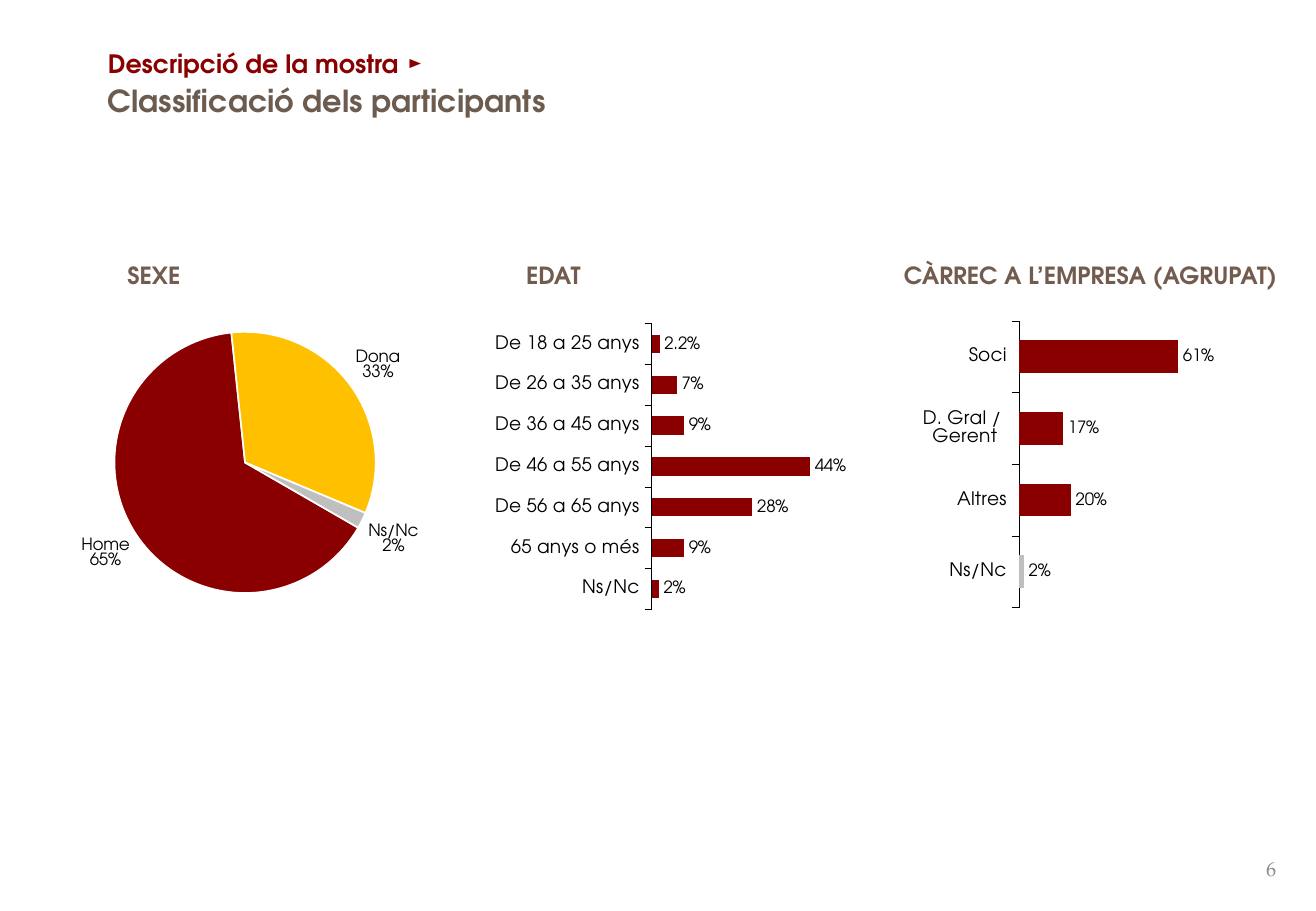
import pptx
import pptx.chart.data
import pptx.dml.color
import pptx.enum.chart
import pptx.enum.text
import pptx.oxml
import pptx.oxml.ns
import pptx.util

SANS = "TeX Gyre Adventor"
SERIF = "TeX Gyre Pagella"
RED, YELLOW, SILVER = "8A0000", "FFC000", "BFBFBF"
BROWN, TAUPE, GREY = "725C4F", "6B5C4F", "8C8C8C"
BLACK, WHITE = "000000", "FFFFFF"


def rgb(value):
    return pptx.dml.color.RGBColor.from_string(value)


def chart_xml(body):
    return pptx.oxml.parse_xml(body.replace(">", f" {pptx.oxml.ns.nsdecls('c')}>", 1))


class Deck:
    def __init__(self, width, height):
        self.prs = pptx.Presentation()
        self.prs.slide_width = pptx.util.Inches(width)
        self.prs.slide_height = pptx.util.Inches(height)
        self.s = self.prs.slides.add_slide(self.prs.slide_layouts[6])

    def box(self, left, top, width, height):
        column = self.prs.slide_width / 100
        row = self.prs.slide_height / 100
        return [round(v) for v in (left * column, top * row, width * column, height * row)]

    def style(self, font, size, color, bold=False, name=SANS):
        font.name = name
        font.size = pptx.util.Pt(size)
        font.bold = bold
        font.color.rgb = rgb(color)

    def text(self, area, words, size, color, bold=True, name=SANS, middle=False, right=False):
        tf = self.s.shapes.add_textbox(*self.box(*area)).text_frame
        tf.word_wrap = True
        anchor = pptx.enum.text.MSO_ANCHOR
        tf.vertical_anchor = anchor.MIDDLE if middle else anchor.TOP
        p = tf.paragraphs[0]
        align = pptx.enum.text.PP_ALIGN
        p.alignment = align.RIGHT if right else align.LEFT
        r = p.add_run()
        r.text = words
        self.style(r.font, size, color, bold, name)

    def chart(self, kind, area, values, plot_area):
        data = pptx.chart.data.CategoryChartData(number_format="0%")
        data.categories = list(values)
        data.add_series("Participants", list(values.values()))
        chart = self.s.shapes.add_chart(kind, *self.box(*area), data).chart
        chart.has_title = False
        chart.has_legend = False
        self.style(chart.font, 10, BLACK)
        plot = chart.plots[0]
        plot.vary_by_categories = False
        labels = plot.series[0].data_labels
        labels.show_value = True
        labels.number_format = "0%"
        labels.number_format_is_linked = False
        labels.position = pptx.enum.chart.XL_LABEL_POSITION.OUTSIDE_END
        self.style(labels.font, 10, BLACK)
        self.place_plot(chart, plot_area)
        return chart

    def place_plot(self, chart, plot_area):
        area = chart._chartSpace.xpath(".//c:plotArea")[0]
        for old in area.xpath("./c:layout"):
            area.remove(old)
        sizes = "".join(f'<c:{tag} val="{v}"/>' for tag, v in zip("xywh", plot_area))
        area.insert(0, chart_xml(
            '<c:layout><c:manualLayout><c:layoutTarget val="inner"/>'
            '<c:xMode val="edge"/><c:yMode val="edge"/>'
            f"{sizes}</c:manualLayout></c:layout>"))

    def fill(self, part, color):
        part.format.fill.solid()
        part.format.fill.fore_color.rgb = rgb(color)

    def pie(self, area, values, colors, start, plot_area):
        chart = self.chart(pptx.enum.chart.XL_CHART_TYPE.PIE, area, values, plot_area)
        series = chart.plots[0].series[0]
        series.data_labels.show_category_name = True
        bubble = chart._chartSpace.xpath(".//c:dLbls/c:showBubbleSize")[0]
        bubble.addnext(chart_xml("<c:separator>\n</c:separator>"))
        pie = chart._chartSpace.xpath(".//c:pieChart")[0]
        for old in pie.xpath("./c:firstSliceAng"):
            pie.remove(old)
        pie.append(chart_xml(f'<c:firstSliceAng val="{start}"></c:firstSliceAng>'))
        for i, color in enumerate(colors):
            point = series.points[i]
            self.fill(point, color)
            point.format.line.color.rgb = rgb(WHITE)
            point.format.line.width = pptx.util.Pt(1)

    def bars(self, area, values, plot_area):
        chart = self.chart(pptx.enum.chart.XL_CHART_TYPE.BAR_CLUSTERED, area, values, plot_area)
        chart.plots[0].gap_width = 120
        series = chart.plots[0].series[0]
        self.fill(series, RED)
        tick = pptx.enum.chart.XL_TICK_MARK
        axis = chart.category_axis
        axis.reverse_order = True
        axis.has_major_gridlines = False
        axis.major_tick_mark = tick.OUTSIDE
        axis.minor_tick_mark = tick.NONE
        axis.format.line.color.rgb = rgb(BLACK)
        axis.format.line.width = pptx.util.Pt(0.25)
        self.style(axis.tick_labels.font, 11, BLACK)
        scale = chart.value_axis
        scale.minimum_scale = 0
        scale.maximum_scale = 1
        scale.has_major_gridlines = False
        scale.visible = False
        return series

    def decimal_label(self, series, index):
        label = series.points[index].data_label
        self.style(label.font, 10, BLACK)
        label.position = pptx.enum.chart.XL_LABEL_POSITION.OUTSIDE_END
        idx = series._element.xpath(f'.//c:dLbl/c:idx[@val="{index}"]')[0]
        idx.addnext(chart_xml('<c:numFmt formatCode="0.0%" sourceLinked="0"></c:numFmt>'))


def main():
    deck = Deck(10.83, 7.5)
    deck.text((7.29, 3.73, 85, 6.4), "Descripció de la mostra ►", 15, RED, middle=True)
    deck.text((7.29, 8.4, 77.65, 6.13), "Classificació dels participants", 18, TAUPE)

    headings = {"SEXE": 8.77, "EDAT": 39.06, "CÀRREC A L’EMPRESA (AGRUPAT)": 67.77}
    for heading, left in headings.items():
        deck.text((left, 28, 32, 4.53), heading, 14, BROWN)

    deck.pie((-5.08, 27.87, 44.6, 50.4), {"Home": 0.65, "Dona": 0.33, "Ns/Nc": 0.02},
             (RED, YELLOW, SILVER), 120, (0.307, 0.17, 0.449, 0.569))

    ages = {"De 18 a 25 anys": 0.022, "De 26 a 35 anys": 0.07, "De 36 a 45 anys": 0.09,
            "De 46 a 55 anys": 0.44, "De 56 a 65 anys": 0.28, "65 anys o més": 0.09,
            "Ns/Nc": 0.02}
    age_bars = deck.bars((36.84, 33.6, 40.9, 34.53), ages, (0.31, 0.056, 0.669, 0.908))
    deck.decimal_label(age_bars, 0)

    posts = {"Soci": 0.61, "D. Gral / \nGerent": 0.17, "Altres": 0.2, "Ns/Nc": 0.02}
    post_bars = deck.bars((56.14, 33.47, 41.64, 34.67), posts, (0.511, 0.051, 0.477, 0.908))
    deck.fill(post_bars.points[3], SILVER)

    deck.text((75.35, 92.67, 22.53, 5.33), "6", 12, GREY, bold=False, name=SERIF,
              middle=True, right=True)
    deck.prs.save("out.pptx")


if __name__ == "__main__":
    main()
